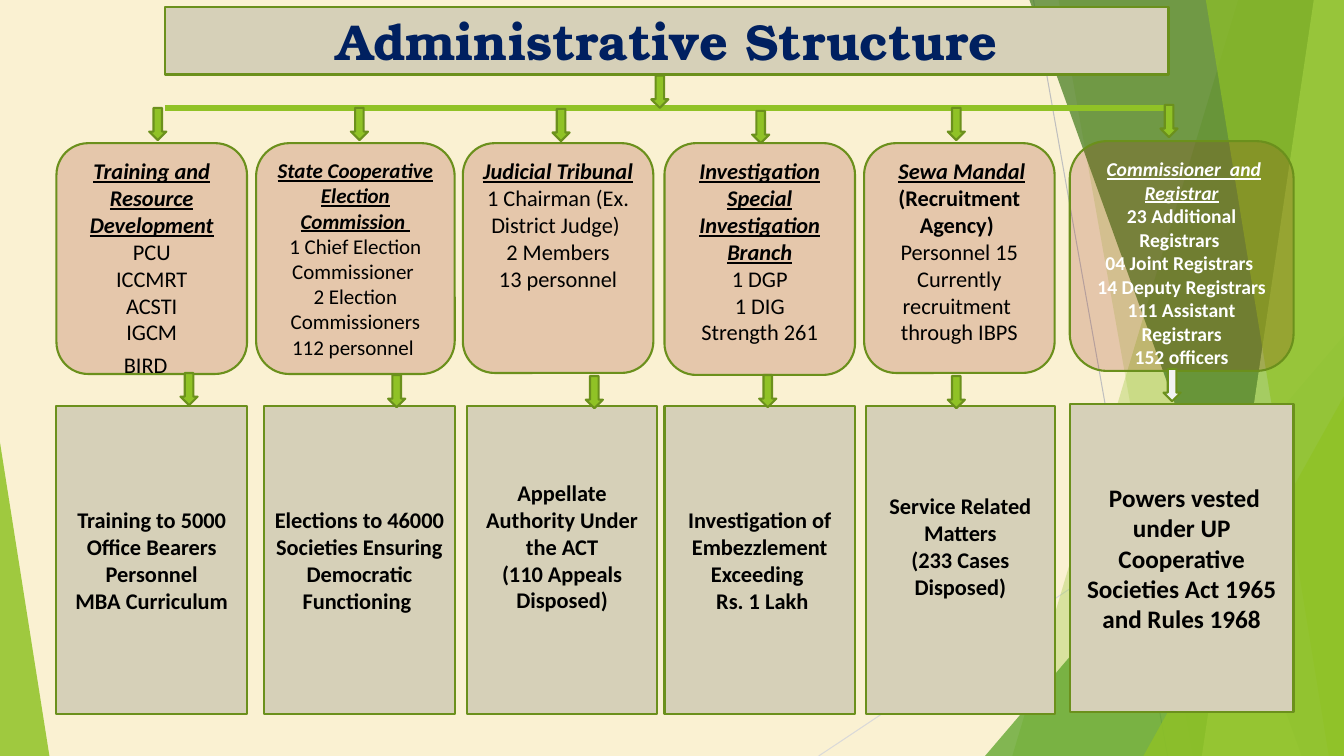
from dataclasses import dataclass

from pptx import Presentation
from pptx.dml.color import RGBColor
from pptx.enum import shapes, text
from pptx.oxml import ns, xmlchemy
from pptx.util import Inches, Pt

CREAM = RGBColor(0xFA, 0xF1, 0xD2)
STONE = RGBColor(0xD6, 0xD0, 0xB8)
RUST = RGBColor(0x93, 0x23, 0x13)
LIME = RGBColor(0x90, 0xC2, 0x26)
PALE_LIME = RGBColor(0xC0, 0xE4, 0x74)
LEAF = RGBColor(0x54, 0xA0, 0x21)
FOREST = RGBColor(0x3F, 0x78, 0x19)
OLIVE = RGBColor(0x6B, 0x90, 0x1C)
NAVY = RGBColor(0x00, 0x20, 0x60)
BLACK = RGBColor(0, 0, 0)
WHITE = RGBColor(0xFF, 0xFF, 0xFF)
SNOW = RGBColor(0xF2, 0xF2, 0xF2)
GREY = RGBColor(0xBF, 0xBF, 0xBF)
LIGHT_GREY = RGBColor(0xD9, 0xD9, 0xD9)

WIDTH, HEIGHT = 13.33, 7.5
RECTANGLE = shapes.MSO_SHAPE.RECTANGLE
ROUNDED = shapes.MSO_SHAPE.ROUNDED_RECTANGLE
TRIANGLE = shapes.MSO_SHAPE.ISOSCELES_TRIANGLE
DOWN_ARROW = shapes.MSO_SHAPE.DOWN_ARROW


@dataclass
class Style:
    """Look of a run of text."""
    size: float = 16
    bold: bool = False
    heading: bool = False
    colour: RGBColor = BLACK
    font: str = "Calibri"


BODY = Style()
BOLD = Style(bold=True)
HEADING = Style(bold=True, heading=True)
SMALL_BODY = Style(15)
SMALL_HEADING = Style(15, True, True)
WHITE_BOLD = Style(14, True, colour=WHITE)
WHITE_HEADING = Style(14, True, True, WHITE)
LARGE_BOLD = Style(18, True)
TITLE = Style(36, True, colour=NAVY, font="TeX Gyre Bonum")


@dataclass
class Unit:
    """One column: a unit card above the box with its duty."""
    card: tuple
    box: tuple
    arrow_in: tuple
    arrow_out: tuple
    card_text: list
    box_text: list
    box_bottom_inset: float = 0.05
    arrow_out_fill: RGBColor = LIME


def lines(style, *texts):
    """Return one single-run paragraph for each text."""
    return [[(line, style)] for line in texts]


UNITS = [
    Unit((0.56, 1.42, 1.89, 2.29), (0.56, 4.03, 1.89, 3.05), (1.48, 1.07), (1.79, 3.7),
         lines(HEADING, "Training and Resource Development")
         + lines(BODY, "PCU", "ICCMRT", "ACSTI", "IGCM")
         + [[("BIRD", BODY), (" ", LARGE_BOLD), (" ", Style(20, True))]],
         lines(BOLD, "Training to 5000 Office Bearers Personnel", " MBA Curriculum ")),
    Unit((2.54, 1.42, 1.97, 2.29), (2.62, 4.03, 1.89, 3.05), (3.48, 1.07), (3.85, 3.72),
         lines(SMALL_HEADING, "State Cooperative Election Commission ")
         + lines(SMALL_BODY, "1 Chief Election Commissioner ",
                 "2 Election Commissioners", "112 personnel "),
         lines(BOLD, "Elections to 46000 Societies Ensuring Democratic Functioning ")),
    Unit((4.59, 1.42, 1.89, 2.28), (4.63, 4.03, 1.89, 3.05), (5.48, 1.08), (5.81, 3.73),
         lines(HEADING, "Judicial Tribunal")
         + lines(BODY, "1 Chairman (Ex. District Judge) ", "2 Members", "13 personnel"),
         lines(BOLD, "Appellate Authority Under the ACT", "(110 Appeals Disposed)"), 0.32),
    Unit((6.59, 1.42, 1.89, 2.3), (6.59, 4.03, 1.89, 3.05), (7.46, 1.1), (7.53, 3.72),
         lines(HEADING, "Investigation", "Special Investigation Branch")
         + lines(BODY, "1 DGP", "1 DIG", "Strength 261"),
         lines(BOLD, "Investigation of Embezzlement Exceeding ", " Rs. 1 Lakh")),
    Unit((8.57, 1.42, 1.89, 2.28), (8.59, 4.03, 1.87, 3.05), (9.4, 1.07), (9.4, 3.73),
         [[(" ", BOLD), ("Sewa Mandal", HEADING)]]
         + lines(BOLD, "(Recruitment Agency) ")
         + [[(" ", BOLD), ("Personnel 15 ", BODY)]]
         + lines(BODY, "Currently recruitment  through IBPS"),
         lines(BOLD, "Service Related Matters", "(233 Cases Disposed)"), 0.32),
    Unit((10.61, 1.4, 2.22, 2.28), (10.61, 4.01, 2.22, 3.05), (11.51, 1.04), (11.54, 3.66),
         [[(" ", WHITE_BOLD), ("Commissioner  and Registrar", WHITE_HEADING)]]
         + lines(WHITE_BOLD, "23 Additional Registrars ", "04 Joint Registrars ",
                 "14 Deputy Registrars", "111 Assistant Registrars", "152 officers"),
         lines(LARGE_BOLD,
               " Powers vested under UP Cooperative Societies Act 1965 and Rules 1968"),
         arrow_out_fill=SNOW),
]


def paint(shape, fill, opacity=100, outline=None):
    """Set fill, opacity and outline, without a shadow."""
    shape.shadow.inherit = False
    shape.fill.solid()
    shape.fill.fore_color.rgb = fill
    if opacity < 100:
        colour = shape.fill._xPr.find(ns.qn("a:solidFill"))[0]
        alpha = xmlchemy.OxmlElement("a:alpha")
        alpha.set("val", str(opacity * 1000))
        colour.append(alpha)
    if outline is None:
        shape.line.fill.background()
    else:
        shape.line.color.rgb = outline
        shape.line.width = Pt(1.5)


def add_preset(slide, kind, place, fill, opacity=100, outline=OLIVE):
    """Add a painted preset shape."""
    shape = slide.shapes.add_shape(kind, *map(Inches, place))
    paint(shape, fill, opacity, outline)
    return shape


def add_triangle(slide, place, apex, fill, opacity):
    """Add a translucent triangle of the backdrop."""
    triangle = add_preset(slide, TRIANGLE, place, fill, opacity, None)
    triangle.adjustments[0] = apex


def add_panel(slide, top_left, bottom_left, fill, opacity):
    """Add a translucent slanted panel reaching the right edge."""
    corners = [(WIDTH, 0), (WIDTH, HEIGHT), (bottom_left, HEIGHT)]
    builder = slide.shapes.build_freeform(Inches(top_left), 0)
    builder.add_line_segments([tuple(map(Inches, corner)) for corner in corners])
    paint(builder.convert_to_shape(), fill, opacity)


def add_line(slide, start, end, colour, width):
    """Add a straight line without a shadow."""
    line = slide.shapes.add_connector(
        shapes.MSO_CONNECTOR.STRAIGHT, *map(Inches, start + end))
    line.line.color.rgb = colour
    line.line.width = Pt(width)
    line._element.spPr.append(xmlchemy.OxmlElement("a:effectLst"))


def add_arrow(slide, corner, fill=LIME):
    """Add a small block arrow pointing down."""
    add_preset(slide, DOWN_ARROW, corner + (0.17, 0.32), fill)


def write(shape, paragraphs, anchor=text.MSO_ANCHOR.MIDDLE):
    """Fill a shape with centred paragraphs of styled runs."""
    frame = shape.text_frame
    frame.word_wrap = True
    frame.vertical_anchor = anchor
    for index, runs in enumerate(paragraphs):
        paragraph = frame.add_paragraph() if index else frame.paragraphs[0]
        paragraph.alignment = text.PP_ALIGN.CENTER
        for content, style in runs:
            run = paragraph.add_run()
            run.text = content
            run.font.name = style.font
            run.font.size = Pt(style.size)
            run.font.bold = style.bold
            run.font.italic = run.font.underline = style.heading
            run.font.color.rgb = style.colour


def add_backdrop(slide):
    """Add the cream background and its green facets."""
    slide.background.fill.solid()
    slide.background.fill.fore_color.rgb = CREAM
    add_line(slide, (10.25, 0), (11.58, HEIGHT), GREY, 0.75)
    add_line(slide, (WIDTH, 4.03), (8.12, HEIGHT), LIGHT_GREY, 0.75)
    add_panel(slide, 12.28, 10.04, LIME, 30)
    add_panel(slide, 10.5, 11.83, LIME, 20)
    add_triangle(slide, (9.77, 3.33, 3.56, 4.17), 1, LEAF, 72)
    add_panel(slide, 10.21, 12.91, FOREST, 70)
    add_panel(slide, 13.03, 11.92, PALE_LIME, 70)
    add_panel(slide, 11.96, 13.18, LIME, 65)
    add_triangle(slide, (11.34, 3.93, 1.99, 3.57), 1, LIME, 80)
    add_triangle(slide, (0, 4.39, 0.49, 3.11), 0, LIME, 85)


def add_unit(slide, unit):
    """Add a unit card, its duty box and both arrows."""
    add_arrow(slide, unit.arrow_in)
    card = add_preset(slide, ROUNDED, unit.card, RUST, 20)
    write(card, unit.card_text, text.MSO_ANCHOR.TOP)
    box = add_preset(slide, RECTANGLE, unit.box, STONE)
    box.text_frame.margin_bottom = Inches(unit.box_bottom_inset)
    write(box, unit.box_text)
    add_arrow(slide, unit.arrow_out, unit.arrow_out_fill)


def main():
    """Build and save the slide."""
    presentation = Presentation()
    presentation.slide_width = Inches(WIDTH)
    presentation.slide_height = Inches(HEIGHT)
    slide = presentation.slides.add_slide(presentation.slide_layouts[6])
    add_backdrop(slide)
    title = add_preset(slide, RECTANGLE, (1.64, 0.07, 9.95, 0.67), STONE)
    write(title, lines(TITLE, "Administrative Structure"))
    add_line(slide, (1.64, 1.07), (11.59, 1.07), LIME, 4.5)
    for unit in UNITS:
        add_unit(slide, unit)
    add_arrow(slide, (6.46, 0.75))
    presentation.save("out.pptx")


if __name__ == "__main__":
    main()
